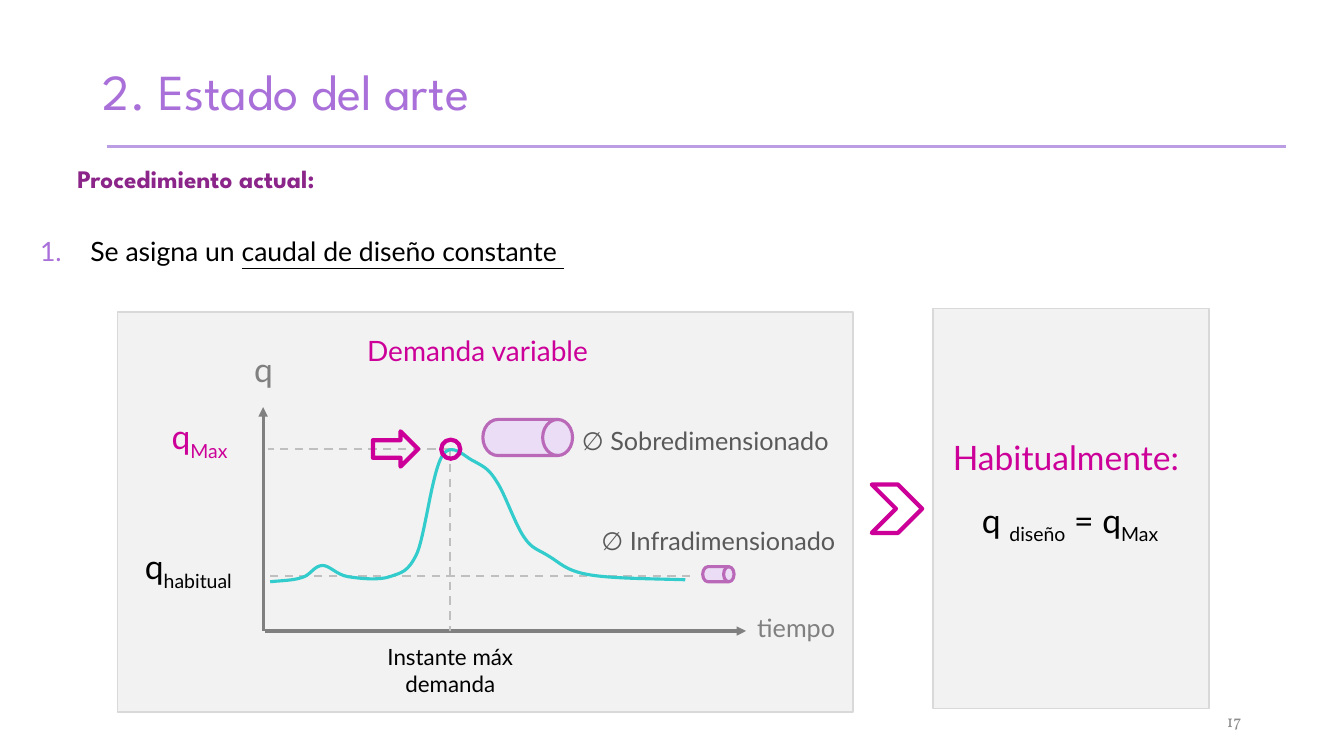
from lxml import etree
from pptx import Presentation
from pptx import util as u
from pptx.dml.color import RGBColor
from pptx.enum import dml, shapes, text
from pptx.oxml import ns

MAGENTA, BLACK, GREY, DARK_GREY = "CC0099", "000000", "808080", "595959"
PURPLE, DASH_GREY = "AA70DA", "BFBFBF"
LEFT, CENTER, RIGHT = text.PP_ALIGN.LEFT, text.PP_ALIGN.CENTER, text.PP_ALIGN.RIGHT
TOP, MIDDLE = text.MSO_ANCHOR.TOP, text.MSO_ANCHOR.MIDDLE


def colour(value):
    return RGBColor.from_string(value)


def write(box, lines, size, font="Lato", align=CENTER, anchor=TOP, spacing=1.0, before=0):
    frame = box.text_frame
    for name, value in {"word_wrap": True, "vertical_anchor": anchor}.items():
        setattr(frame, name, value)
    for index, spans in enumerate(lines):
        para = frame.add_paragraph() if index else frame.paragraphs[0]
        layout = {"alignment": align, "line_spacing": spacing, "space_before": u.Pt(before)}
        for name, value in layout.items():
            setattr(para, name, value)
        for words, ink, style in spans:
            span = para.add_run()
            span.text = words
            look = {"name": font, "size": u.Pt(size), "bold": style == "bold", "underline": style == "underline"}
            for name, value in look.items():
                setattr(span.font, name, value)
            span.font.color.rgb = colour(ink)
            if style == "sub":
                span.font._element.set("baseline", "-25000")


deck = Presentation()
deck.slide_width, deck.slide_height = u.Cm(33.87), u.Cm(19.05)
page = deck.slides.add_slide(deck.slide_layouts[5])

title = page.shapes.title
for name, value in {"left": 2.34, "top": 0.53, "width": 29.21, "height": 3.68}.items():
    setattr(title, name, u.Cm(value))
write(title, [[("2. Estado del arte", PURPLE, "")]], 36, "League Spartan", LEFT, MIDDLE, 0.9)

axis_x, axis_y = 6.63, 15.9
peak_x, peak_y, usual_y = 11.35, 11.32, 14.51
lines = [
    ((axis_x, axis_y), (axis_x, 10.26), GREY, 2.25, "arrow"),
    ((axis_x + 0.05, axis_y), (18.8, axis_y), GREY, 2.25, "arrow"),
    ((peak_x, peak_y), (peak_x, axis_y), DASH_GREY, 1.5, "dash"),
    ((peak_x, peak_y), (6.76, peak_y), DASH_GREY, 1.5, "dash"),
    ((17.4, usual_y), (6.68, usual_y), DASH_GREY, 1.5, "dash"),
    ((2.69, 3.69), (32.41, 3.69), "BB9DE3", 2.25, ""),
]

demand_start = (6.81, 14.66)
demand_curves = [
    ((7.09, 14.63), (7.39, 14.63), (7.62, 14.55)),
    ((7.82, 14.5), (7.92, 14.25), (8.13, 14.25)),
    ((8.31, 14.25), (8.48, 14.48), (8.76, 14.53)),
    ((9.07, 14.58), (9.55, 14.63), (9.83, 14.53)),
    ((10.11, 14.43), (10.29, 14.43), (10.52, 13.92)),
    ((10.72, 13.41), (10.9, 11.86), (11.15, 11.48)),
    ((11.22, 11.37), (11.3, 11.33), (11.38, 11.33)),
    ((11.58, 11.33), (11.79, 11.56), (11.96, 11.63)),
    ((12.19, 11.76), (12.32, 11.81), (12.52, 12.14)),
    ((12.73, 12.45), (12.98, 13.21), (13.21, 13.54)),
    ((13.41, 13.84), (13.56, 13.84), (13.84, 14.02)),
    ((14.1, 14.17), (14.25, 14.38), (14.83, 14.48)),
    ((15.39, 14.58), (16.33, 14.58), (17.27, 14.61)),
]

kinds = shapes.MSO_SHAPE
drum = kinds.FLOWCHART_DIRECT_ACCESS_STORAGE
panels = [
    (kinds.RECTANGLE, (23.51, 7.77, 6.96, 10.08), "F2F2F2", "D9D9D9", 1),
    (kinds.RECTANGLE, (2.96, 7.86, 18.54, 10.08), "F2F2F2", "D9D9D9", 1),
]
symbols = [
    (drum, (12.17, 10.57, 2.26, 0.91), "EBDDF6", "BA69B8", 2.25),
    (drum, (17.71, 14.28, 0.79, 0.38), "EBDDF6", "BA69B8", 2.25),
    (kinds.CHEVRON, (21.97, 12.21, 1.27, 1.22), None, MAGENTA, 3),
    (kinds.OVAL, (11.12, 11.08, 0.48, 0.48), None, MAGENTA, 3),
    (kinds.RIGHT_ARROW, (9.4, 10.87, 1.14, 0.89), None, MAGENTA, 3),
]

for layer in (panels, symbols):
    for kind, place, fill, ink, weight in layer:
        shape = page.shapes.add_shape(kind, *map(u.Cm, place))
        shape.shadow.inherit = False
        if fill:
            shape.fill.solid()
            shape.fill.fore_color.rgb = colour(fill)
        else:
            shape.fill.background()
        shape.line.color.rgb = colour(ink)
        shape.line.width = u.Pt(weight)
    if layer is symbols:
        break

    for start, end, ink, weight, style in lines:
        line = page.shapes.add_connector(shapes.MSO_CONNECTOR.STRAIGHT, *map(u.Cm, start + end))
        line.line.color.rgb = colour(ink)
        line.line.width = u.Pt(weight)
        if style == "dash":
            line.line.dash_style = dml.MSO_LINE.DASH
        if style == "arrow":
            etree.SubElement(line.line._get_or_add_ln(), ns.qn("a:tailEnd"), type="triangle")
        etree.SubElement(line._element.spPr, ns.qn("a:effectLst"))

    builder = page.shapes.build_freeform(*map(u.Cm, demand_start))
    builder.add_line_segments([tuple(map(u.Cm, point)) for curve in demand_curves for point in curve], close=False)
    demand = builder.convert_to_shape()
    segments = list(demand._element.iter(ns.qn("a:lnTo")))
    for first in range(0, len(segments), 3):
        trio = segments[first:first + 3]
        bend = etree.Element(ns.qn("a:cubicBezTo"))
        trio[0].addprevious(bend)
        for segment in trio:
            bend.append(segment[0])
            segment.getparent().remove(segment)
    demand.shadow.inherit = False
    demand.fill.background()
    demand.line.color.rgb = colour("33CCCC")
    demand.line.width = u.Pt(2.25)

formula = [("q ", BLACK, ""), ("diseño", BLACK, "sub"), (" = q", BLACK, ""), ("Max", BLACK, "sub")]
step_one = [("Se asigna un ", BLACK, ""), ("caudal de diseño constante ", BLACK, "underline")]
labels = [
    ((5.87, 8.66, 1.55, 1.27), [[("q", GREY, "")]], 24, {}),
    ((18.44, 15.3, 3.25, 1.02), [[("tiempo", GREY, "")]], 18, {}),
    ((3.25, 10.36, 3.56, 1.27), [[("q", MAGENTA, ""), ("Max", MAGENTA, "sub")]], 24, {}),
    ((2.97, 13.64, 3.56, 1.27), [[("q", BLACK, ""), ("habitual", BLACK, "sub")]], 24, {}),
    ((9.46, 16.08, 3.78, 1.63), [[("Instante máx demanda", BLACK, "")]], 16, {}),
    ((14.41, 10.59, 6.73, 1.02), [[("∅ Sobredimensionado", DARK_GREY, "")]], 18, {}),
    ((14.46, 13.11, 7.29, 1.02), [[("∅ Infradimensionado", DARK_GREY, "")]], 18, {}),
    ((8.2, 8.28, 7.67, 1.12), [[("Demanda variable", MAGENTA, "")]], 20, {}),
    ((23.72, 10.37, 6.5, 3.33), [[("Habitualmente: ", MAGENTA, "")], formula], 24, {"spacing": 1.5}),
    ((1.7, 3.71, 15.16, 1.68), [[("Procedimiento actual:", "8B2589", "bold")]], 18,
     {"font": "League Spartan", "align": LEFT, "anchor": MIDDLE, "spacing": 0.9, "before": 10}),
    ((23.92, 17.65, 7.62, 1.02), [[("17", "8C8C8C", "")]], 12,
     {"font": "Vollkorn", "align": RIGHT, "anchor": MIDDLE}),
    ((0.76, 5.4, 16.59, 13.39), [step_one], 19, {"align": LEFT, "spacing": 1.5, "before": 10}),
]
for place, words, size, layout in labels:
    box = page.shapes.add_textbox(*map(u.Cm, place))
    write(box, words, size, **layout)

numbering = box.text_frame.paragraphs[0]._p.get_or_add_pPr()
numbering.set("marL", str(u.Cm(1.27)))
numbering.set("indent", str(-u.Cm(1.27)))
number_ink = etree.SubElement(numbering, ns.qn("a:buClr"))
etree.SubElement(number_ink, ns.qn("a:srgbClr"), val=PURPLE)
etree.SubElement(numbering, ns.qn("a:buFont"), typeface="+mj-lt")
etree.SubElement(numbering, ns.qn("a:buAutoNum"), type="arabicPeriod")

deck.save("out.pptx")
